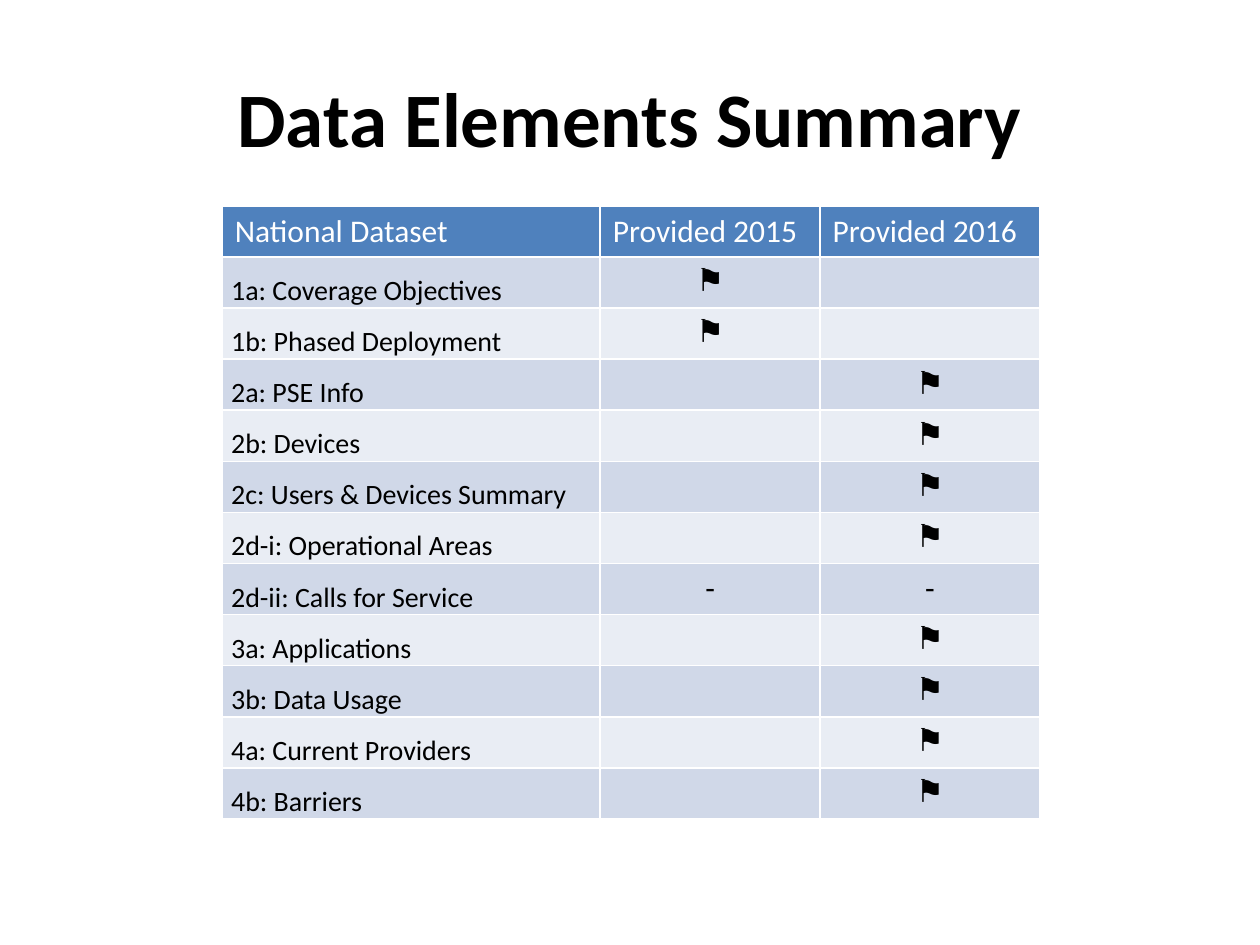
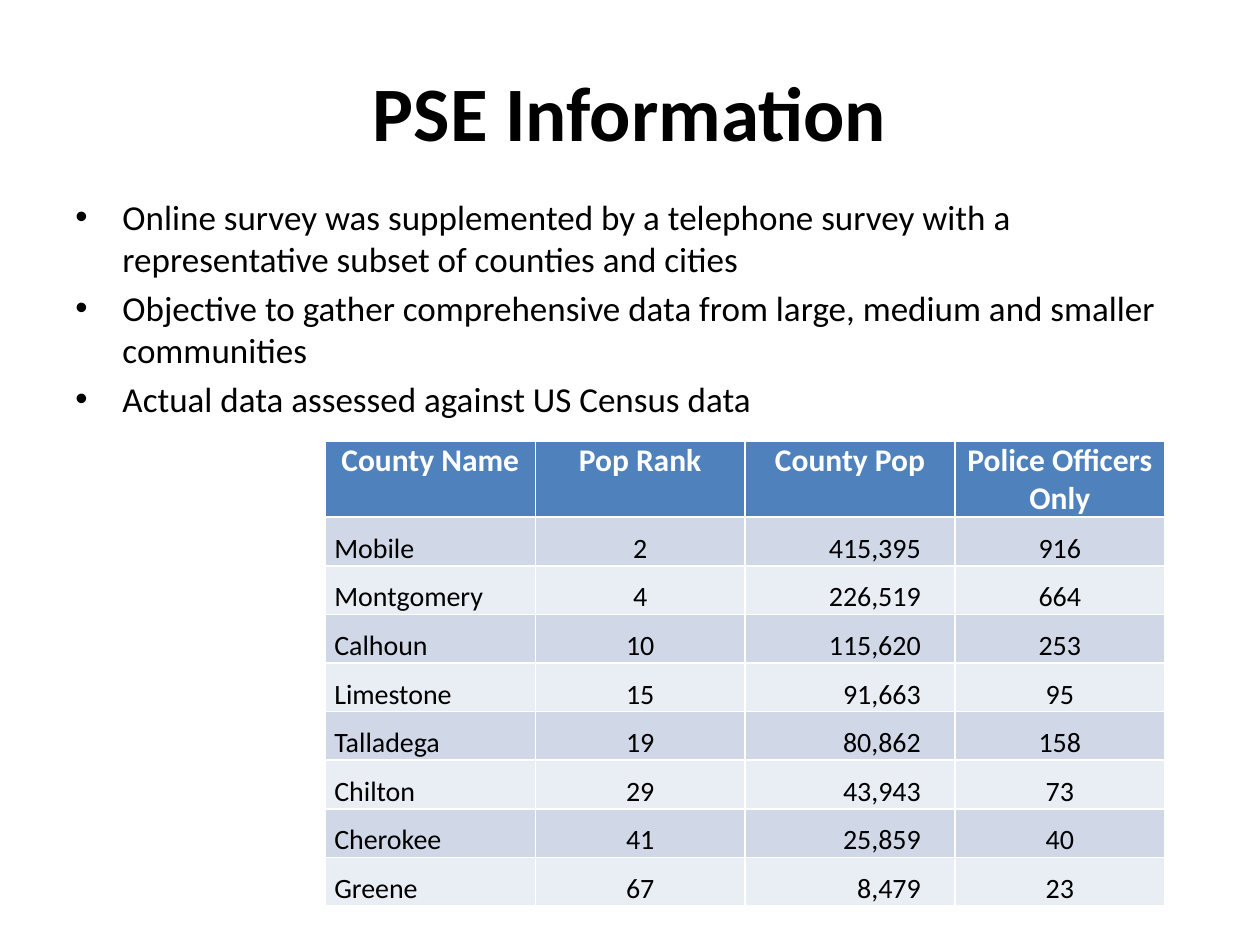
import pptx
import pptx.dml.color
import pptx.enum.text
import pptx.util
from lxml import etree
from pptx.oxml.ns import qn

Cm, Pt = pptx.util.Cm, pptx.util.Pt
ALIGN = pptx.enum.text.PP_ALIGN
ANCHOR = pptx.enum.text.MSO_ANCHOR

BLACK, WHITE, HEADER_FILL = "000000", "FFFFFF", "4F81BD"
BANDS = ("D0D8E8", "E9EDF4")
FLAG = "⚑"
TIGHT = dict(margin_left=Cm(0.18), margin_right=Cm(0.18), margin_top=0, margin_bottom=0)
LABEL = dict(TIGHT, vertical_anchor=ANCHOR.BOTTOM)

DATASETS = [
    ("1a: Coverage Objectives", FLAG, ""),
    ("1b: Phased Deployment", FLAG, ""),
    ("2a: PSE Info", "", FLAG),
    ("2b: Devices", "", FLAG),
    ("2c: Users & Devices Summary", "", FLAG),
    ("2d-i: Operational Areas", "", FLAG),
    ("2d-ii: Calls for Service", "-", "-"),
    ("3a: Applications", "", FLAG),
    ("3b: Data Usage", "", FLAG),
    ("4a: Current Providers", "", FLAG),
    ("4b: Barriers", "", FLAG),
]
COUNTIES = [
    ("Mobile", "2", "415,395", "916"),
    ("Montgomery", "4", "226,519", "664"),
    ("Calhoun", "10", "115,620", "253"),
    ("Limestone", "15", "91,663", "95"),
    ("Talladega", "19", "80,862", "158"),
    ("Chilton", "29", "43,943", "73"),
    ("Cherokee", "41", "25,859", "40"),
    ("Greene", "67", "8,479", "23"),
]
SURVEY_POINTS = [
    "Online survey was supplemented by a telephone survey with a "
    "representative subset of counties and cities",
    "Objective to gather comprehensive data from large, medium and smaller communities",
    "Actual data assessed against US Census data",
]


def rgb(value):
    return pptx.dml.color.RGBColor.from_string(value)


def apply(obj, values):
    for name, value in values.items():
        setattr(obj, name, value)


def write(p, text, size, color=BLACK, bold=False, font="Calibri", **paragraph):
    apply(p, paragraph)
    r = p.add_run()
    r.text = text
    apply(r.font, dict(name=font, size=Pt(size), bold=bold))
    r.font.color.rgb = rgb(color)


def add_text_box(slide, box, anchor):
    tf = slide.shapes.add_textbox(*map(Cm, box)).text_frame
    apply(tf, dict(word_wrap=True, vertical_anchor=anchor))
    return tf


def add_title(slide, text, top):
    tf = add_text_box(slide, (1.27, top, 22.86, 3.18), ANCHOR.MIDDLE)
    write(tf.paragraphs[0], text, 44, bold=True, alignment=ALIGN.CENTER)


def add_bullets(slide, box, points):
    tf = add_text_box(slide, box, ANCHOR.TOP)
    for i, point in enumerate(points):
        p = tf.add_paragraph() if i else tf.paragraphs[0]
        pPr = p._p.get_or_add_pPr()
        pPr.set("marL", str(Cm(0.95)))
        pPr.set("indent", str(-Cm(0.95)))
        etree.SubElement(pPr, qn("a:buFont")).set("typeface", "Arial")
        etree.SubElement(pPr, qn("a:buChar")).set("char", "•")
        write(p, point, 20, space_before=Pt(4 if i else 0))


def add_grid(slide, left, top, widths, header_height, row_height, row_count):
    """Add a table with a header row and banded rows below it."""
    height = header_height + row_height * row_count
    table = slide.shapes.add_table(row_count + 1, len(widths), Cm(left), Cm(top),
                                   Cm(sum(widths)), Cm(height)).table
    for column, width in zip(table.columns, widths):
        column.width = Cm(width)
    for i, row in enumerate(table.rows):
        row.height = Cm(row_height if i else header_height)
        for cell in row.cells:
            cell.fill.solid()
            cell.fill.fore_color.rgb = rgb(BANDS[(i - 1) % 2] if i else HEADER_FILL)
    return table


def write_cell(cell, text, size, layout=None, **style):
    apply(cell, layout or {})
    if text:
        write(cell.text_frame.paragraphs[0], text, size, **style)


def add_dataset_table(slide, left, top):
    table = add_grid(slide, left, top, (7.62, 4.43, 4.43), 1.03, 1.03, len(DATASETS))
    for j, text in enumerate(("National Dataset", "Provided 2015", "Provided 2016")):
        write_cell(table.cell(0, j), text, 18, color=WHITE)
    for i, (label, *marks) in enumerate(DATASETS, 1):
        write_cell(table.cell(i, 0), label, 16, LABEL, line_spacing=1.07)
        for j, mark in enumerate(marks, 1):
            write_cell(table.cell(i, j), mark, 18, alignment=ALIGN.CENTER,
                       font="Arial" if mark == FLAG else "Calibri")


def add_county_table(slide, left, top):
    table = add_grid(slide, left, top, (4.23,) * 4, 1.52, 0.98, len(COUNTIES))
    headings = ("County Name", "Pop Rank", "County Pop", "Police Officers Only")
    aligns = (ALIGN.LEFT, ALIGN.CENTER, ALIGN.RIGHT, ALIGN.CENTER)
    for j, text in enumerate(headings):
        write_cell(table.cell(0, j), text, 18, TIGHT, color=WHITE, bold=True,
                   alignment=ALIGN.CENTER)
    for i, county in enumerate(COUNTIES, 1):
        for j, (text, align) in enumerate(zip(county, aligns)):
            write_cell(table.cell(i, j), text, 16, LABEL, alignment=align)
            if align == ALIGN.RIGHT:
                table.cell(i, j).margin_right = Cm(0.69)


def build_data_elements(slide):
    add_title(slide, "Data Elements Summary", 0.76)
    add_dataset_table(slide, 4.48, 4.15)


def build_pse_information(slide):
    add_title(slide, "PSE Information", 0.64)
    add_bullets(slide, (1.27, 3.81, 22.86, 12.57), SURVEY_POINTS)
    add_county_table(slide, 6.56, 8.9)


def main():
    prs = pptx.Presentation()
    prs.slide_width, prs.slide_height = Cm(25.4), Cm(19.05)
    for build in (build_data_elements, build_pse_information):
        build(prs.slides.add_slide(prs.slide_layouts[6]))
    prs.save("out.pptx")


if __name__ == "__main__":
    main()
